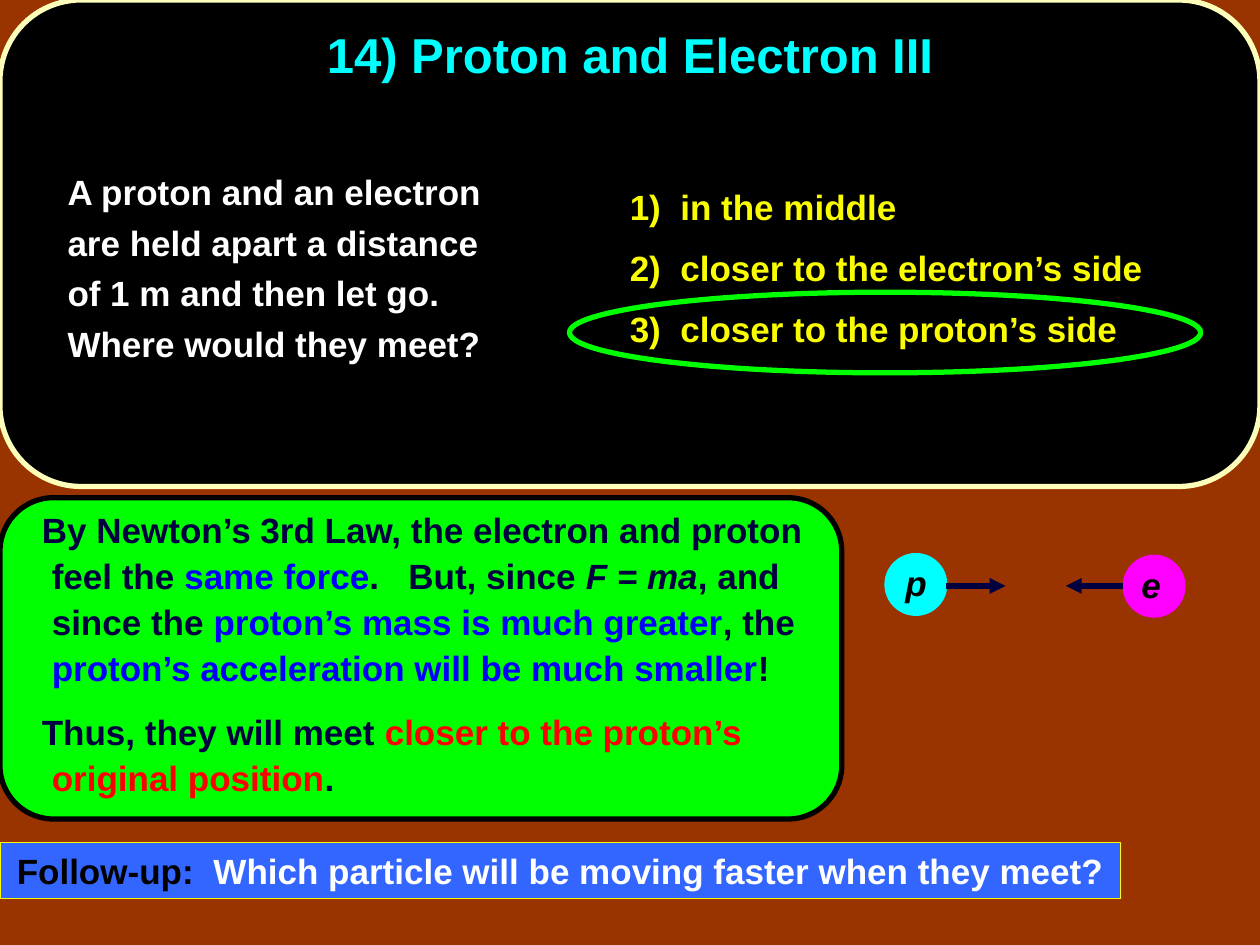
from lxml.etree import SubElement
from pptx import Presentation
from pptx.dml.color import RGBColor
from pptx.enum.shapes import MSO_CONNECTOR, MSO_SHAPE
from pptx.enum.text import MSO_ANCHOR, PP_ALIGN
from pptx.oxml.ns import qn
from pptx.util import Pt

NAVY, BLUE, RED = "000040", "0000FF", "FF0000"
BLACK, WHITE, YELLOW, GREEN, CYAN = "000000", "FFFFFF", "FAFD00", "00FF00", "00FFFF"


def color(value):
    return RGBColor.from_string(value)


def add_shape(slide, kind, box, fill=None, line=None, width=3):
    shape = slide.shapes.add_shape(kind, *map(Pt, box))
    shape.shadow.inherit = False
    if fill:
        shape.fill.solid()
        shape.fill.fore_color.rgb = color(fill)
    else:
        shape.fill.background()
    if line:
        shape.line.color.rgb = color(line)
        shape.line.width = Pt(width)
    else:
        shape.line.fill.background()
    return shape


def add_text_box(slide, box, wrap=True):
    frame = slide.shapes.add_textbox(*map(Pt, box)).text_frame
    frame.word_wrap = wrap
    return frame


def write_paragraph(paragraph, runs, size=20, italic=False, align=PP_ALIGN.LEFT,
                    spacing=1.0, before=0, margin=0, indent=0):
    """Each run is (text, colour) or (text, colour, italic)."""
    paragraph.font.name = "Arial"
    paragraph.font.size = Pt(size)
    paragraph.font.bold = True
    paragraph.font.italic = italic
    paragraph.alignment = align
    paragraph.line_spacing = spacing
    paragraph.space_before = Pt(before)
    properties = paragraph._p.get_or_add_pPr()
    properties.set("marL", str(Pt(margin)))
    properties.set("indent", str(Pt(indent)))
    for text, run_color, *slanted in runs:
        run = paragraph.add_run()
        run.text = text
        run.font.color.rgb = color(run_color)
        if slanted:
            run.font.italic = slanted[0]


def write_paragraphs(frame, paragraphs, **style):
    for index, runs in enumerate(paragraphs):
        paragraph = frame.add_paragraph() if index else frame.paragraphs[0]
        write_paragraph(paragraph, runs, **style)


def add_arrow(slide, start, end, y):
    arrow = slide.shapes.add_connector(MSO_CONNECTOR.STRAIGHT, Pt(start), Pt(y), Pt(end), Pt(y))
    arrow.line.color.rgb = color(NAVY)
    arrow.line.width = Pt(3)
    SubElement(arrow.line._get_or_add_ln(), qn("a:tailEnd"), type="triangle")
    SubElement(arrow._element.spPr, qn("a:effectLst"))


def add_particle(slide, letter, fill, left, top, letter_left):
    add_shape(slide, MSO_SHAPE.OVAL, (left, top, 36, 36), fill)
    frame = add_text_box(slide, (letter_left, top + 1.4, 26, 31), wrap=False)
    write_paragraph(frame.paragraphs[0], [(letter, BLACK)], italic=True)


def main():
    presentation = Presentation()
    presentation.slide_width, presentation.slide_height = Pt(720), Pt(540)
    slide = presentation.slides.add_slide(presentation.slide_layouts[6])
    slide.background.fill.solid()
    slide.background.fill.fore_color.rgb = color("993300")

    # Explanation panel
    add_shape(slide, MSO_SHAPE.ROUNDED_RECTANGLE, (0, 284.4, 481, 183.6), GREEN, BLACK)
    explanation = add_text_box(slide, (0, 284.4, 473.8, 177.8))
    write_paragraphs(explanation, [
        [("By Newton’s 3rd Law, the electron and proton feel the ", NAVY),
         ("same force", BLUE),
         (".   But, since ", NAVY),
         ("F = ma", NAVY, True),
         (", and since the ", NAVY),
         ("proton’s mass is much greater", BLUE),
         (", the ", NAVY),
         ("proton’s acceleration will be much smaller", BLUE),
         ("!", NAVY)],
        [("Thus, they will meet ", NAVY),
         ("closer to the proton’s original position", RED),
         (".", NAVY)],
    ], spacing=1.1, before=10, margin=22.5, indent=-5.7)

    # Question panel
    add_shape(slide, MSO_SHAPE.ROUNDED_RECTANGLE, (0, 0, 720, 278), BLACK, "FCFEB9")
    question = add_text_box(slide, (0, 89.3, 291.6, 167.8))
    write_paragraphs(question, [
        [("A proton and an electron are held apart a distance of 1 m and then let go.  "
          "Where would they meet?", WHITE)],
    ], spacing=1.2, before=6, margin=31.5)

    # Answers, with the correct one ringed
    answers = ("1)  in the middle", "2)  closer to the electron’s side",
               "3)  closer to the proton’s side")
    frame = add_text_box(slide, (352.8, 97.9, 348.5, 139.7))
    write_paragraphs(frame, [[(answer, YELLOW)] for answer in answers],
                     spacing=1.2, before=6, margin=31.5, indent=-31.5)
    add_shape(slide, MSO_SHAPE.OVAL, (325.4, 167, 360.7, 46.1), line=GREEN)

    # Particles moving towards each other
    add_particle(slide, "p", CYAN, 505.4, 316, 510.2)
    add_particle(slide, "e", "FF00FF", 641.5, 317, 645.1)
    add_arrow(slide, 540.7, 574.6, 334.8)
    add_arrow(slide, 641.5, 609.1, 334.8)

    # Title
    title = add_text_box(slide, (65.5, 0, 589, 66.2))
    title.vertical_anchor = MSO_ANCHOR.MIDDLE
    write_paragraph(title.paragraphs[0], [("14) Proton and Electron III", CYAN)],
                    size=28, align=PP_ALIGN.CENTER, spacing=0.9)

    # Follow-up bar
    bar = add_shape(slide, MSO_SHAPE.RECTANGLE, (0, 481.5, 640.5, 32), "3366FF", YELLOW, 0.75)
    write_paragraph(bar.text_frame.paragraphs[0], [
        ("Follow-up:", BLACK),
        ("  Which particle will be moving faster when they meet?", WHITE),
    ], align=PP_ALIGN.CENTER)

    presentation.save("out.pptx")


if __name__ == "__main__":
    main()
